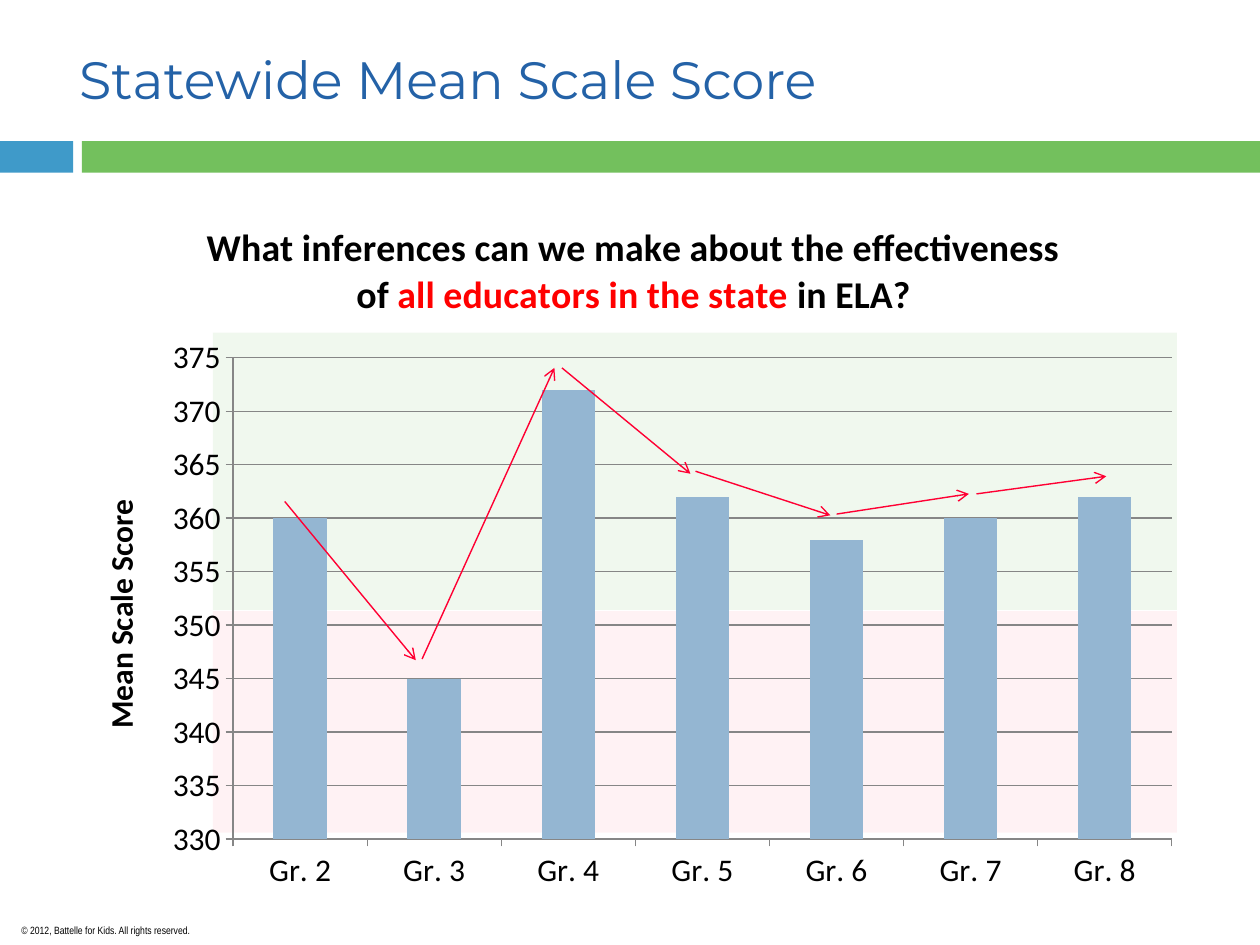
from lxml import etree
from pptx import Presentation
from pptx.chart.data import CategoryChartData
from pptx.dml.color import RGBColor
from pptx.enum.chart import XL_CHART_TYPE as ChartType, XL_TICK_MARK as Tick
from pptx.enum.shapes import MSO_CONNECTOR as Connector, MSO_SHAPE as Shape
from pptx.enum.text import MSO_ANCHOR as Anchor, PP_ALIGN as Align
from pptx.oxml import parse_xml
from pptx.oxml.ns import nsdecls, qn
from pptx.util import Inches, Pt

BLACK = RGBColor(0, 0, 0)
WHITE = RGBColor(0xFF, 0xFF, 0xFF)
BLUE = RGBColor(0x3F, 0x9A, 0xC9)
GREEN = RGBColor(0x73, 0xC0, 0x5D)
NAVY = RGBColor(0x24, 0x62, 0xA7)
RED = RGBColor(0xFF, 0, 0)
CRIMSON = RGBColor(0xFF, 0, 0x33)
BAR_BLUE = RGBColor(0x94, 0xB6, 0xD2)
GRAY = RGBColor(0x86, 0x86, 0x86)

SLIDE_W, SLIDE_H = 10, 7.5
HEADING = "Statewide Mean Scale Score"
COPYRIGHT = "© 2012, Battelle for Kids. All rights reserved."
QUESTION = [
    [("What inferences can we make about the effectiveness", BLACK)],
    [("of ", BLACK), ("all educators in the state", RED), (" in ELA?", BLACK)],
]
AXIS_TITLE = [[("Mean Scale Score", BLACK)]]
SCORES = {"Gr. 2": 360, "Gr. 3": 345, "Gr. 4": 372, "Gr. 5": 362,
          "Gr. 6": 358, "Gr. 7": 360, "Gr. 8": 362}

# left, top, width, height, colour, opacity in percent
PANELS = [
    (0, 1.12, 0.58, 0.25, BLUE, 100),
    (0.65, 1.12, 9.35, 0.25, GREEN, 100),
    (7.59, 5.36, 2.41, 2.14, WHITE, 100),
    (1.69, 2.64, 7.65, 2.2, GREEN, 10),
    (1.69, 4.85, 7.65, 1.76, CRIMSON, 5),
]
CHART_BOX = (0.57, 1.56, 8.92, 5.61)
PLOT_BOX = (1.85, 2.84, 7.45, 3.82)
QUESTION_AT = (1.61, 1.73)
AXIS_TITLE_AT = (0.74, 3.92)
TREND = [
    ((2.26, 3.98), (3.3, 5.24)),
    ((3.35, 5.23), (4.4, 2.92)),
    ((4.46, 2.92), (5.48, 3.76)),
    ((5.52, 3.74), (6.59, 4.09)),
    ((6.64, 4.08), (7.69, 3.92)),
    ((7.75, 3.92), (8.78, 3.78)),
]


def inches(values):
    return [Inches(value) for value in values]


def set_font(font, color, **values):
    for name, value in values.items():
        setattr(font, name, value)
    font.color.rgb = color


def add_panel(slide, left, top, width, height, color, opacity):
    panel = slide.shapes.add_shape(
        Shape.RECTANGLE, *inches((left, top, width, height)))
    panel.shadow.inherit = False
    panel.fill.solid()
    panel.fill.fore_color.rgb = color
    panel.line.fill.background()
    if opacity < 100:
        fill_color = panel.fill._xPr.find(".//" + qn("a:srgbClr"))
        etree.SubElement(fill_color, qn("a:alpha"), val=str(opacity * 1000))


def add_label(slide, box, text, color, margin, **font_values):
    label = slide.shapes.add_textbox(*inches(box))
    frame = label.text_frame
    frame.word_wrap = True
    frame.vertical_anchor = Anchor.MIDDLE
    for side in ("left", "right", "top", "bottom"):
        setattr(frame, f"margin_{side}", Inches(margin))
    run = frame.paragraphs[0].add_run()
    run.text = text
    set_font(run.font, color, **font_values)


def place(element, left, top, size=None):
    """Fix a chart part at a slide position given in inches."""
    chart_left, chart_top, chart_w, chart_h = CHART_BOX
    parts = {"x": (left - chart_left) / chart_w, "y": (top - chart_top) / chart_h}
    target = ""
    if size:
        target = '<c:layoutTarget val="inner"/>'
        parts.update(w=size[0] / chart_w, h=size[1] / chart_h)
    modes = "".join(f'<c:{key}Mode val="edge"/>' for key in "xy")
    shares = "".join(f'<c:{key} val="{share:.4f}"/>' for key, share in parts.items())
    layout = parse_xml(f'<c:layout {nsdecls("c")}><c:manualLayout>{target}{modes}'
                       f'{shares}</c:manualLayout></c:layout>')
    for old in element.findall(qn("c:layout")):
        element.remove(old)
    text = element.find(qn("c:tx"))
    element.insert(0 if text is None else element.index(text) + 1, layout)


def write_title(title, lines, size, position):
    frame = title.text_frame
    for index, line in enumerate(lines):
        paragraph = frame.paragraphs[0] if index == 0 else frame.add_paragraph()
        paragraph.alignment = Align.CENTER
        for text, color in line:
            run = paragraph.add_run()
            run.text = text
            set_font(run.font, color, name="Calibri", size=Pt(size), bold=True)
    place(title._element, *position)


def add_score_chart(slide):
    data = CategoryChartData()
    data.categories = list(SCORES)
    data.add_series("Series 1", list(SCORES.values()))
    chart = slide.shapes.add_chart(
        ChartType.COLUMN_CLUSTERED, *inches(CHART_BOX), data).chart
    set_font(chart.font, BLACK, name="Calibri", size=Pt(18))
    chart.has_legend = False
    chart.has_title = True
    write_title(chart.chart_title, QUESTION, 21.6, QUESTION_AT)
    chart.chart_title.include_in_layout = False

    bars = chart.plots[0]
    bars.gap_width = 150
    bars.vary_by_categories = False
    fill = bars.series[0].format.fill
    fill.solid()
    fill.fore_color.rgb = BAR_BLUE

    scores = chart.value_axis
    scale = {"minimum_scale": 330, "maximum_scale": 375, "major_unit": 5,
             "has_major_gridlines": True, "has_title": True}
    for name, value in scale.items():
        setattr(scores, name, value)
    scores.tick_labels.number_format = "0"
    scores.tick_labels.number_format_is_linked = False
    write_title(scores.axis_title, AXIS_TITLE, 18, AXIS_TITLE_AT)
    body = scores.axis_title.text_frame._txBody.bodyPr
    body.set("rot", "-5400000")
    body.set("vert", "horz")
    for axis in (scores, chart.category_axis):
        axis.major_tick_mark = Tick.OUTSIDE
        axis.minor_tick_mark = Tick.NONE
    for part in (scores, chart.category_axis, scores.major_gridlines):
        part.format.line.color.rgb = GRAY
        part.format.line.width = Pt(0.75)
    left, top, *size = PLOT_BOX
    place(chart._chartSpace.chart.plotArea, left, top, size)


def add_arrow(slide, start, end):
    arrow = slide.shapes.add_connector(
        Connector.STRAIGHT, *inches(start + end))
    arrow.line.color.rgb = CRIMSON
    arrow.line.width = Pt(0.79)
    etree.SubElement(arrow.line._get_or_add_ln(), qn("a:tailEnd"), type="arrow")
    etree.SubElement(arrow._element.spPr, qn("a:effectLst"))


def main():
    deck = Presentation()
    deck.slide_width, deck.slide_height = inches((SLIDE_W, SLIDE_H))
    slide = deck.slides.add_slide(deck.slide_layouts[6])
    for panel in PANELS:
        add_panel(slide, *panel)
    add_label(slide, (0.17, 7.34, 1.67, 0.08), COPYRIGHT, BLACK, 0,
              name="Arial Narrow", size=Pt(6))
    add_label(slide, (0.53, 0, 9, 1.25), HEADING, NAVY, 0.1,
              name="Montserrat", size=Pt(30))
    add_score_chart(slide)
    for start, end in TREND:
        add_arrow(slide, start, end)
    deck.save("out.pptx")


if __name__ == "__main__":
    main()
